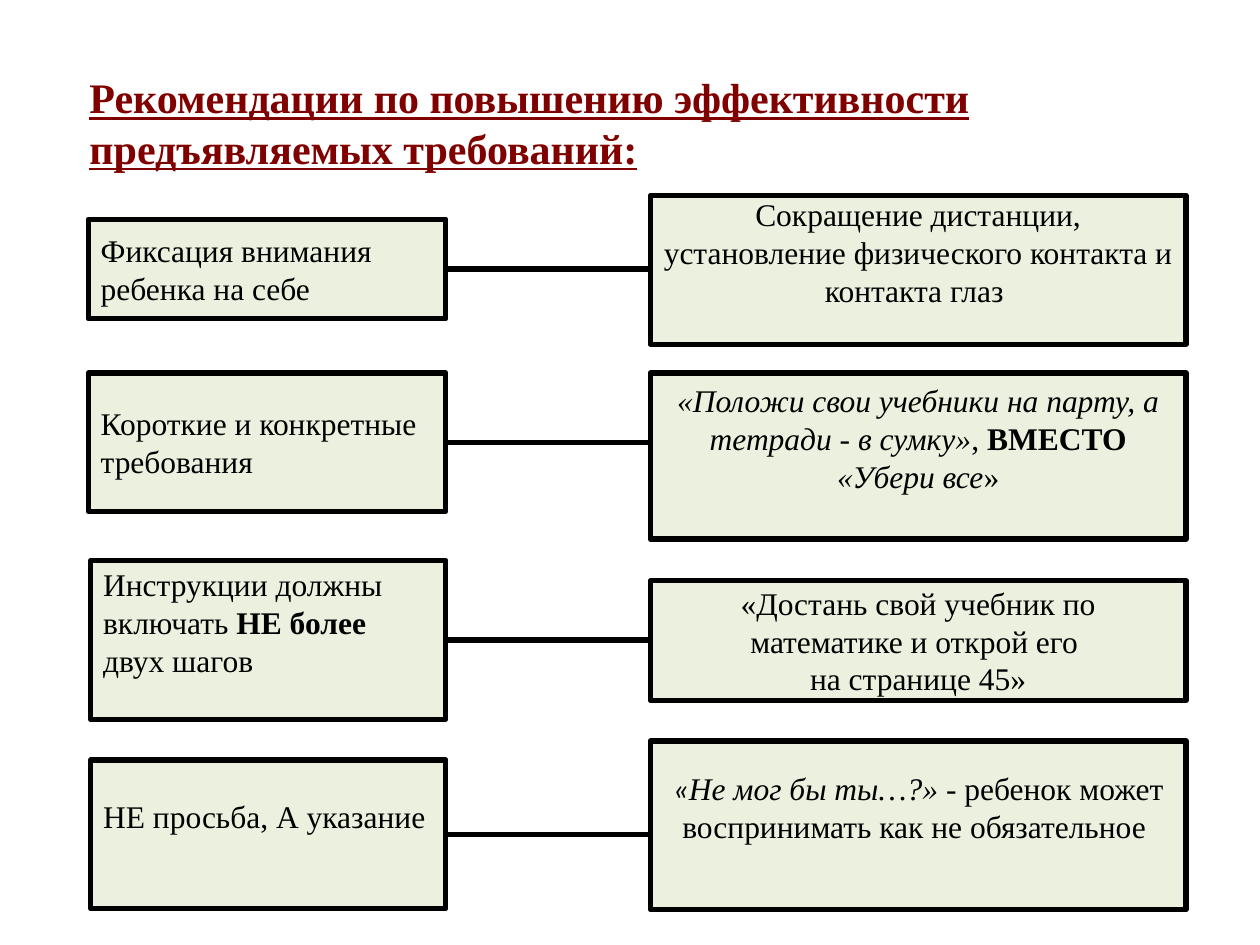
import lxml.etree
import pptx
import pptx.dml.color
import pptx.enum.shapes
import pptx.enum.text
import pptx.oxml.ns
import pptx.util

Cm, Pt = pptx.util.Cm, pptx.util.Pt
ALIGN = pptx.enum.text.PP_ALIGN
ANCHOR = pptx.enum.text.MSO_ANCHOR

COLOURS = {"title": "800000", "fill": "EBF1DE", "ink": "000000"}
SERIF = "Times New Roman"
LEFT_END = 8.99     # right edge shared by the left boxes
RIGHT_START = 13.11
RIGHT_WIDTH = 10.8
INSET = 0.13
LINE_HEIGHT = 0.73  # one line of 18 pt text

# One row: left box (left, top, height, lines kept free below, alignment, paragraphs)
# and right box (top, height, lines kept free below, paragraphs).
# A paragraph is a list of (text, style); b = bold, i = italic, c = Calibri.
ROWS = [
    ((1.78, 4.42, 2.01, 0, ALIGN.LEFT,
      [[("Фиксация внимания ребенка на себе", "")]]),
     (3.94, 3.0, 1,
      [[("Сокращение дистанции, установление физического контакта "
         "и контакта глаз ", "")]])),
    ((1.78, 7.52, 2.79, 0, ALIGN.LEFT,
      [[("Короткие и конкретные требования", "")]]),
     (7.52, 3.35, 1,
      [[("«Положи свои учебники на парту, а тетради - в сумку»", "i"),
        (", ", ""), ("ВМЕСТО ", "b"), ("«Убери все", "i"), ("»", "")]])),
    ((1.83, 11.3, 3.2, 1, ALIGN.LEFT,
      [[("Инструкции должны включать ", ""), ("НЕ более ", "b"),
        ("двух шагов ", "")]]),
     (11.71, 2.41, 0,
      [[("«Достань свой учебник по математике и открой его ", "")],
       [("на странице 45»", "")]])),
    ((1.83, 15.32, 3.0, 1, ALIGN.CENTER,
      [[("НЕ просьба, А указание ", "")]]),
     (14.94, 3.4, 1,
      [[("«", "ic"), ("Не мог бы ты…?» ", "i"),
        ("- ребенок может воспринимать как не обязательное ", "")]])),
]


def colour(name):
    return pptx.dml.color.RGBColor.from_string(COLOURS[name])


def set_font(font, size, name):
    font.name = SERIF
    font.size = Pt(size)
    font.color.rgb = colour(name)


def add_title(page, text):
    title = page.shapes.title
    title.left, title.top = Cm(1.55), Cm(1.32)
    title.width, title.height = Cm(19.81), Cm(2.31)
    frame = title.text_frame
    frame.auto_size = pptx.enum.text.MSO_AUTO_SIZE.NONE
    frame.vertical_anchor = ANCHOR.TOP
    frame.text = text
    para = frame.paragraphs[0]
    para.alignment = ALIGN.LEFT
    set_font(para.font, 24, "title")
    para.font.bold = para.font.underline = True


def add_box(page, left, top, width, height, free_lines, alignment, paragraphs):
    box = page.shapes.add_shape(pptx.enum.shapes.MSO_SHAPE.RECTANGLE,
                                Cm(left), Cm(top), Cm(width), Cm(height))
    box.shadow.inherit = False
    box.fill.solid()
    box.fill.fore_color.rgb = colour("fill")
    box.line.color.rgb = colour("ink")
    box.line.width = Pt(3)
    frame = box.text_frame
    frame.word_wrap = True
    frame.vertical_anchor = ANCHOR.MIDDLE
    frame.margin_bottom = Cm(INSET + free_lines * LINE_HEIGHT)
    for index, spans in enumerate(paragraphs):
        para = frame.add_paragraph() if index else frame.paragraphs[0]
        para.alignment = alignment
        set_font(para.font, 18, "ink")
        for text, style in spans:
            span = para.add_run()
            span.text = text
            if "b" in style:
                span.font.bold = True
            if "i" in style:
                span.font.italic = True
            if "c" in style:
                span.font.name = "Calibri"


def add_link(page, height):
    link = page.shapes.add_connector(
        pptx.enum.shapes.MSO_CONNECTOR.STRAIGHT,
        Cm(LEFT_END), Cm(height), Cm(RIGHT_START), Cm(height))
    link.line.color.rgb = colour("ink")
    link.line.width = Pt(3)
    # An empty effect list removes the theme shadow
    lxml.etree.SubElement(link._element.spPr,
                          pptx.oxml.ns.qn("a:effectLst"))


def main():
    deck = pptx.Presentation()
    deck.slide_width, deck.slide_height = Cm(25.4), Cm(19.05)
    page = deck.slides.add_slide(deck.slide_layouts[5])
    add_title(page, "Рекомендации по повышению эффективности "
                    "предъявляемых требований:")

    # Each advice on the left is linked to its example on the right
    for advice, example in ROWS:
        left, top, height, free_lines, alignment, paragraphs = advice
        add_box(page, left, top, LEFT_END - left, height,
                free_lines, alignment, paragraphs)
        link_height = top + height / 2
        top, height, free_lines, paragraphs = example
        add_box(page, RIGHT_START, top, RIGHT_WIDTH, height,
                free_lines, ALIGN.CENTER, paragraphs)
        add_link(page, link_height)

    deck.save("out.pptx")


if __name__ == "__main__":
    main()
